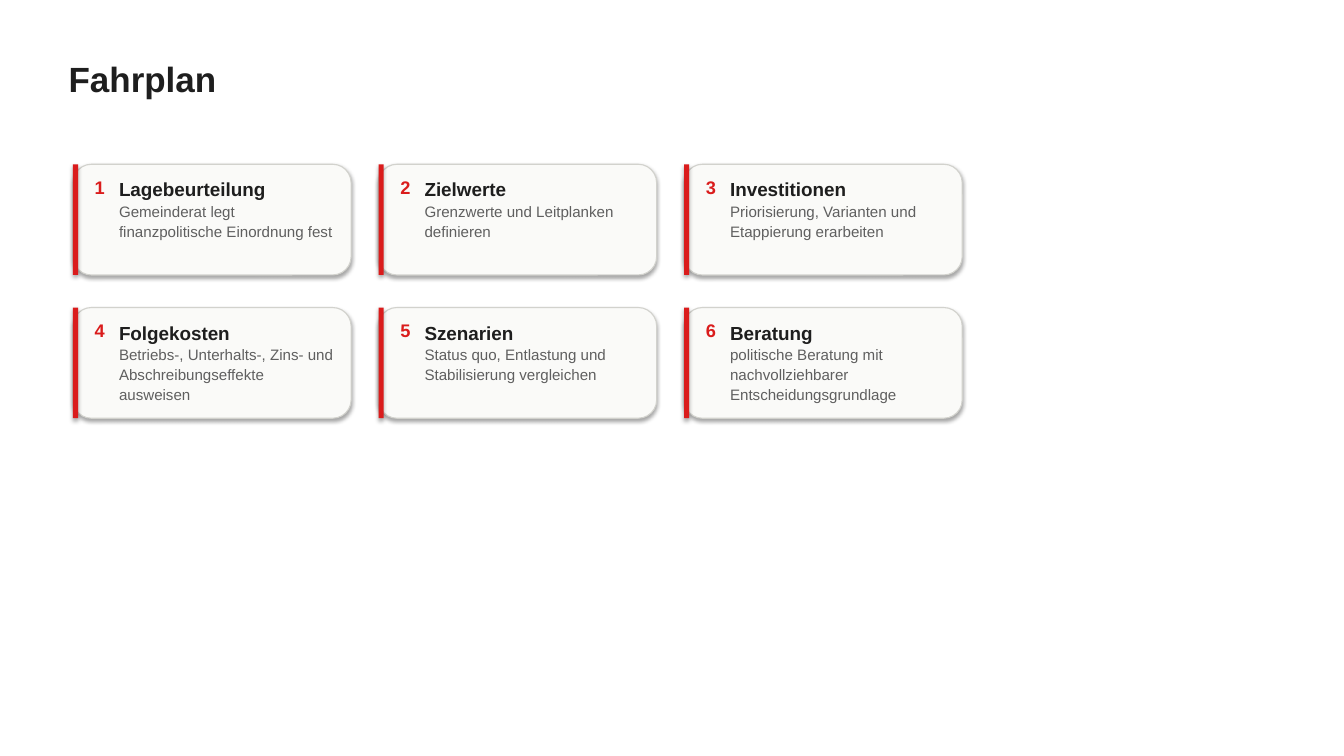
from lxml import etree
from pptx import Presentation
from pptx import util as u
from pptx.dml import color
from pptx.enum import shapes, text
from pptx.oxml import ns

COLORS = {
    "ink": "1E1E1E",
    "grey": "5F5F5F",
    "red": "DA1C1C",
    "card": "FAFAF8",
    "border": "D2D2CD",
    "shadow": "000000",
}
FONT = "Arial"
STEPS = [
    ("Lagebeurteilung", "Gemeinderat legt finanzpolitische Einordnung fest"),
    ("Zielwerte", "Grenzwerte und Leitplanken definieren"),
    ("Investitionen", "Priorisierung, Varianten und Etappierung erarbeiten"),
    ("Folgekosten", "Betriebs-, Unterhalts-, Zins- und Abschreibungseffekte ausweisen"),
    ("Szenarien", "Status quo, Entlastung und Stabilisierung vergleichen"),
    ("Beratung", "politische Beratung mit nachvollziehbarer Entscheidungsgrundlage"),
]


def rgb(name):
    """Return the named colour."""
    return color.RGBColor.from_string(COLORS[name])


def add_shadow(sp):
    """Give a shape a soft shadow that falls straight down."""
    sp.shadow.inherit = False
    effects = sp._element.spPr.find(ns.qn("a:effectLst"))
    outer = etree.SubElement(
        effects, ns.qn("a:outerShdw"), blurRad=str(u.Pt(3.1)), dist=str(u.Pt(1.8)),
        dir="5400000", algn="ctr", rotWithShape="0")
    clr = etree.SubElement(outer, ns.qn("a:srgbClr"), val=COLORS["shadow"])
    etree.SubElement(clr, ns.qn("a:alpha"), val="35000")


def add_panel(s, kind, box, fill, line=None):
    """Draw a filled shape with a shadow and an optional outline."""
    sp = s.shapes.add_shape(kind, *box)
    sp.fill.solid()
    sp.fill.fore_color.rgb = rgb(fill)
    if line:
        sp.line.color.rgb = rgb(line)
        sp.line.width = u.Pt(0.8)
    else:
        sp.line.fill.background()
    add_shadow(sp)


def set_font(p, size, name, bold):
    """Format all text of a paragraph."""
    p.font.name = FONT
    p.font.size = u.Pt(size)
    p.font.bold = bold
    p.font.color.rgb = rgb(name)


def add_label(s, box, words, size, name, bold=False, align=text.PP_ALIGN.LEFT):
    """Place one wrapped paragraph in a text box with narrow margins."""
    tf = s.shapes.add_textbox(*box).text_frame
    tf.word_wrap = True
    tf.auto_size = text.MSO_AUTO_SIZE.SHAPE_TO_FIT_TEXT
    tf.margin_left = tf.margin_right = u.Cm(0.05)
    tf.margin_top = tf.margin_bottom = u.Cm(0.03)
    p = tf.paragraphs[0]
    p.text = words
    p.alignment = align
    p.line_spacing = 1.1
    p.space_after = u.Pt(2)
    set_font(p, size, name, bold)


def add_title(s, box, words):
    """Move and format the title placeholder."""
    sp = s.shapes.title
    sp.left, sp.top, sp.width, sp.height = box
    tf = sp.text_frame
    tf.word_wrap = False
    tf.auto_size = text.MSO_AUTO_SIZE.SHAPE_TO_FIT_TEXT
    tf.vertical_anchor = text.MSO_ANCHOR.TOP
    tf.margin_left = tf.margin_right = 0
    tf.margin_top = tf.margin_bottom = u.Cm(0.13)
    p = tf.paragraphs[0]
    p.text = words
    p.alignment = text.PP_ALIGN.LEFT
    set_font(p, 25, "ink", True)


def add_card(s, box, number, heading, body):
    """Draw one numbered step with its red edge, heading and description."""
    x, y, w, h = box
    add_panel(s, shapes.MSO_SHAPE.ROUNDED_RECTANGLE, box, "card", "border")
    add_panel(s, shapes.MSO_SHAPE.RECTANGLE, (x, y, u.Cm(0.13), h), "red")
    add_label(s, (x + u.Cm(0.28), y + u.Cm(0.22), u.Cm(0.79), u.Cm(0.61)),
              str(number), 13, "red", True, text.PP_ALIGN.CENTER)
    indent = u.Cm(1.11)
    add_label(s, (x + indent, y + u.Cm(0.26), w - indent - u.Cm(0.26), u.Cm(0.56)),
              heading, 13.5, "ink", True)
    add_label(s, (x + indent, y + u.Cm(0.89), w - indent - u.Cm(0.34), u.Cm(1.75)),
              body, 10.8, "grey")


def add_roadmap(s, box, columns=3, rows=2):
    """Lay out the steps as a grid of cards filling the box."""
    x, y, w, h = box
    card_w, card_h = u.Cm(7.01), u.Cm(2.79)
    step_x = (w - card_w) // (columns - 1)
    step_y = (h - card_h) // (rows - 1)
    for i, (heading, body) in enumerate(STEPS):
        row, column = divmod(i, columns)
        card = (x + column * step_x, y + row * step_y, card_w, card_h)
        add_card(s, card, i + 1, heading, body)


def main():
    """Build and save the slide."""
    prs = Presentation()
    prs.slide_width, prs.slide_height = u.Cm(33.87), u.Cm(19.05)
    s = prs.slides.add_slide(prs.slide_layouts[5])
    add_title(s, (u.Cm(1.73), u.Cm(1.32), u.Cm(3.76), u.Cm(1.32)), "Fahrplan")
    add_roadmap(s, (u.Cm(1.84), u.Cm(4.14), u.Cm(22.41), u.Cm(6.4)))
    prs.save("out.pptx")


if __name__ == "__main__":
    main()
